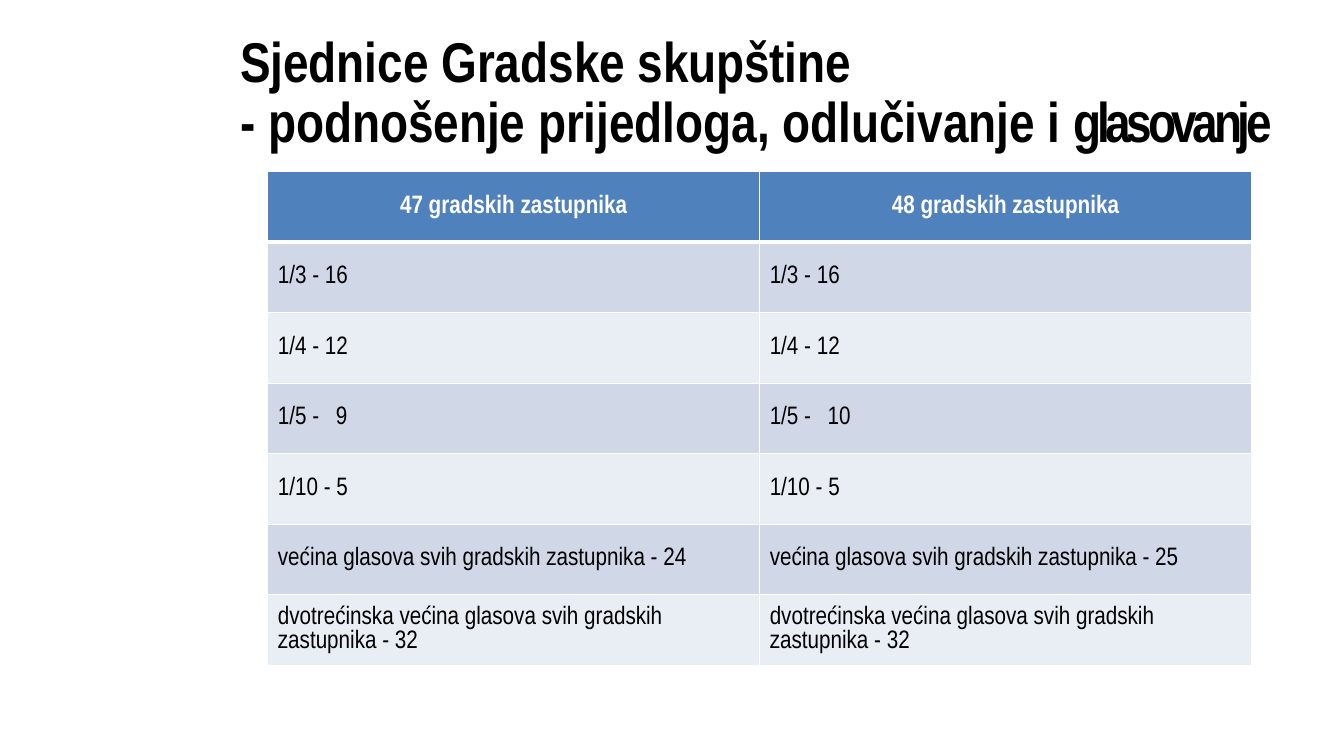
from lxml.etree import SubElement
from pptx import Presentation
from pptx.dml.color import RGBColor
from pptx.enum.text import MSO_ANCHOR, MSO_AUTO_SIZE, PP_ALIGN
from pptx.oxml.ns import qn
from pptx.util import Cm, Pt

FONT = "Arial Narrow"
BLACK = RGBColor(0x00, 0x00, 0x00)
WHITE = RGBColor(0xFF, 0xFF, 0xFF)
BLUE = RGBColor(0x4F, 0x81, 0xBD)
BAND_DARK = RGBColor(0xD0, 0xD8, 0xE8)
BAND_LIGHT = RGBColor(0xE9, 0xED, 0xF4)
RESULT_TAB = Cm(1.46)

ROWS = [
    ("47 gradskih zastupnika", "48 gradskih zastupnika"),
    ("1/3 - 16", "1/3 - 16"),
    ("1/4 - 12", "1/4 - 12"),
    ("1/5 -\t9", "1/5 -\t10"),
    ("1/10 - 5", "1/10 - 5"),
    ("većina glasova svih gradskih zastupnika - 24",
     "većina glasova svih gradskih zastupnika - 25"),
    ("dvotrećinska većina glasova svih gradskih zastupnika - 32",
     "dvotrećinska većina glasova svih gradskih zastupnika - 32"),
]


def set_font(para, size, color, bold):
    """Give a paragraph the slide's font."""
    font = para.font
    font.name, font.size, font.bold = FONT, Pt(size), bold
    font.color.rgb = color


def fill_heading(box, start, ending, spacing):
    """Write one heading line whose ending has its own letter spacing."""
    frame = box.text_frame
    frame.word_wrap = True
    frame.auto_size = MSO_AUTO_SIZE.NONE
    frame.vertical_anchor = MSO_ANCHOR.TOP
    frame.margin_left = frame.margin_top = Cm(0.03)
    frame.margin_right = frame.margin_bottom = 0
    para = frame.paragraphs[0]
    para.alignment = PP_ALIGN.LEFT
    set_font(para, 40, BLACK, True)
    para.add_run().text = start
    span = para.add_run()
    span.text = ending
    span.font._element.set("spc", str(round(spacing * 100)))


def add_headings(page, left, top, width, height):
    """Place the title and the line under it."""
    title = page.shapes.title
    title.left, title.top, title.width, title.height = left, top, Cm(15.6), height
    fill_heading(title, "Sjednice Gradske ", "skupštine", -0.1)
    subtitle = page.shapes.add_textbox(left, top + Cm(1.52), width, height)
    fill_heading(subtitle, "- podnošenje prijedloga, odlučivanje i ", "glasovanje", -3.1)


def set_borders(cell, top, bottom):
    """Draw white cell borders, with top and bottom widths in points."""
    properties = cell._tc.get_or_add_tcPr()
    for side, width in (("lnL", 1), ("lnR", 1), ("lnT", top), ("lnB", bottom)):
        line = SubElement(properties, qn(f"a:{side}"), w=str(Pt(width)))
        fill = SubElement(line, qn("a:solidFill"))
        SubElement(fill, qn("a:srgbClr"), val=str(WHITE))


def fill_cell(cell, text, row):
    """Write and format one cell according to its row."""
    header = row == 0
    set_borders(cell, 3 if row == 1 else 1, 3 if header else 1)
    cell.fill.solid()
    cell.fill.fore_color.rgb = BLUE if header else BAND_DARK if row % 2 else BAND_LIGHT
    cell.vertical_anchor = MSO_ANCHOR.MIDDLE
    cell.text = text
    para = cell.text_frame.paragraphs[0]
    para.alignment = PP_ALIGN.CENTER if header else PP_ALIGN.LEFT
    if "\t" in text:
        tabs = SubElement(para._p.get_or_add_pPr(), qn("a:tabLst"))
        SubElement(tabs, qn("a:tab"), pos=str(RESULT_TAB), algn="l")
    set_font(para, 18, WHITE if header else BLACK, header)


def add_majorities(page, left, top, width, height):
    """Place the table of votes needed for each majority."""
    table = page.shapes.add_table(len(ROWS), len(ROWS[0]), left, top, width, height).table
    for row, texts in enumerate(ROWS):
        for column, text in enumerate(texts):
            fill_cell(table.cell(row, column), text, row)


def main():
    """Build and save the deck."""
    deck = Presentation()
    deck.slide_width, deck.slide_height = Cm(33.87), Cm(19.05)
    page = deck.slides.add_slide(deck.slide_layouts[5])
    add_headings(page, Cm(6.02), Cm(0.64), Cm(27.05), Cm(1.75))
    add_majorities(page, Cm(6.75), Cm(4.32), Cm(24.79), Cm(12.45))
    deck.save("out.pptx")


if __name__ == "__main__":
    main()
